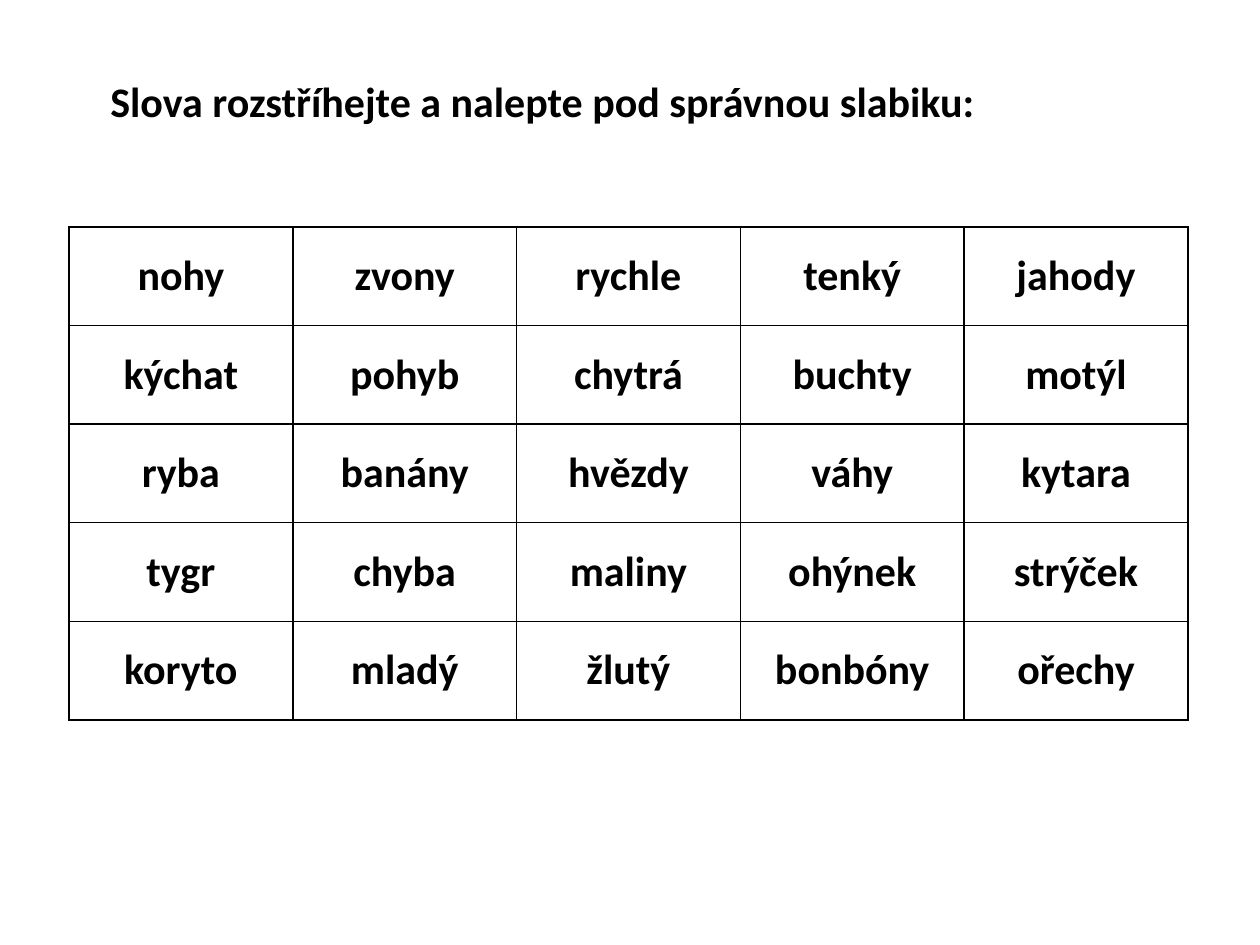
from typing import NamedTuple

from lxml.etree import SubElement
from pptx import Presentation
from pptx.dml.color import RGBColor
from pptx.enum.text import MSO_ANCHOR as Anchor
from pptx.enum.text import MSO_AUTO_SIZE as AutoSize
from pptx.enum.text import PP_ALIGN as Align
from pptx.oxml.ns import qn
from pptx.util import Emu, Pt

PX_PER_INCH = 126
COLORS = {"ink": "000000"}
WORDS = [
    ["nohy", "zvony", "rychle", "tenký", "jahody"],
    ["kýchat", "pohyb", "chytrá", "buchty", "motýl"],
    ["ryba", "banány", "hvězdy", "váhy", "kytara"],
    ["tygr", "chyba", "maliny", "ohýnek", "strýček"],
    ["koryto", "mladý", "žlutý", "bonbóny", "ořechy"],
]


class Area(NamedTuple):
    left: int
    top: int
    width: int
    height: int

    def emu(self) -> list[Emu]:
        return [px(length) for length in self]


INSTRUCTION_AREA = Area(98, 69, 994, 63)
WORD_AREA = Area(69, 227, 1119, 493)


def px(length: int) -> Emu:
    return Emu(round(length * 914400 / PX_PER_INCH))


def write_text(frame, text: str, *, size: int = 24, bold: bool = True,
               color: str = "ink", align=Align.LEFT, before: int = 0) -> None:
    para = frame.paragraphs[0]
    para.alignment = align
    para.space_before = Pt(before)
    span = para.add_run()
    span.text = text
    span.font.name = "Calibri"
    span.font.size = Pt(size)
    span.font.bold = bold
    span.font.color.rgb = RGBColor.from_string(COLORS[color])


def outline_cell(cell, color: str = "ink", width: int = 1) -> None:
    properties = cell._tc.get_or_add_tcPr()
    for position, side in enumerate(("lnL", "lnR", "lnT", "lnB")):
        line = SubElement(properties, qn(f"a:{side}"), w=str(Pt(width)))
        fill = SubElement(line, qn("a:solidFill"))
        SubElement(fill, qn("a:srgbClr"), val=COLORS[color])
        properties.insert(position, line)


def add_word_table(page, area: Area, words: list[list[str]]) -> None:
    frame = page.shapes.add_table(len(words), len(words[0]), *area.emu())
    table = frame.table
    table.first_row = False
    table.horz_banding = False
    for row, row_words in zip(table.rows, words):
        for cell, word in zip(row.cells, row_words):
            cell.fill.background()
            cell.vertical_anchor = Anchor.MIDDLE
            outline_cell(cell)
            write_text(cell.text_frame, word, align=Align.CENTER, before=18)


def add_instruction(page, area: Area, text: str) -> None:
    box = page.shapes.add_textbox(*area.emu())
    box.text_frame.word_wrap = True
    box.text_frame.auto_size = AutoSize.SHAPE_TO_FIT_TEXT
    write_text(box.text_frame, text)


def main() -> None:
    deck = Presentation()
    deck.slide_width, deck.slide_height = px(1260), px(945)
    page = deck.slides.add_slide(deck.slide_layouts[6])
    add_word_table(page, WORD_AREA, WORDS)
    add_instruction(page, INSTRUCTION_AREA,
                    "Slova rozstříhejte a nalepte pod správnou slabiku:")
    deck.save("out.pptx")


if __name__ == "__main__":
    main()
